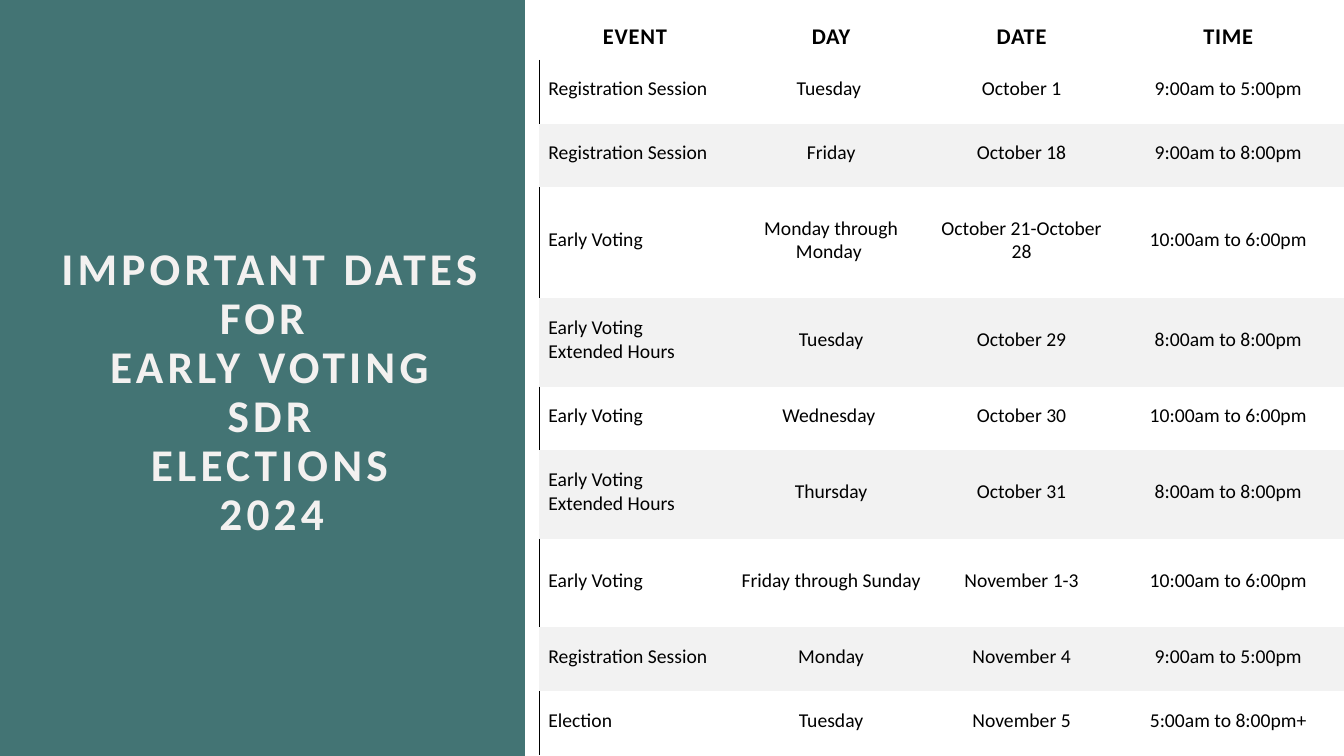
"""Build the slide of early voting dates."""
from lxml import etree
from pptx import Presentation
from pptx.dml.color import RGBColor
from pptx.enum.shapes import MSO_SHAPE
from pptx.enum.text import MSO_ANCHOR, MSO_AUTO_SIZE, PP_ALIGN
from pptx.oxml.ns import qn
from pptx.util import Pt

RECTANGLE = MSO_SHAPE.RECTANGLE
MIDDLE, BOTTOM = MSO_ANCHOR.MIDDLE, MSO_ANCHOR.BOTTOM
LEFT, CENTER = PP_ALIGN.LEFT, PP_ALIGN.CENTER
NO_AUTOFIT = MSO_AUTO_SIZE.NONE
TITLE_ONLY = 5
PLAIN_TABLE_STYLE = "{2D5ABB26-0587-4C30-8999-92F81FD0307C}"
FONT = "Calibri"
COLORS = {"panel": "437474", "title": "F3F1F0", "text": "000000", "band": "F2F2F2"}

TITLE_LINES = ["IMPORTANT DATES", "FOR ", "EARLY VOTING", "SDR", "ELECTIONS", "2024"]
COLUMN_WIDTHS = [136.8, 143.3, 128.9, 166.3]
HEADER, SINGLE, DOUBLE, TALL = 31.8, 45.5, 63.2, 79.2
SCHEDULE = [
    (HEADER, "EVENT", "DAY", "DATE", "TIME"),
    (SINGLE, "Registration Session", "Tuesday ", "October 1", "9:00am to 5:00pm"),
    (SINGLE, "Registration Session", "Friday", "October 18", "9:00am to 8:00pm"),
    (TALL, "Early Voting", "Monday through Monday ", "October 21-October 28", "10:00am to 6:00pm"),
    (DOUBLE, "Early Voting Extended Hours", "Tuesday", "October 29", "8:00am to 8:00pm"),
    (SINGLE, "Early Voting", "Wednesday ", "October 30", "10:00am to 6:00pm"),
    (DOUBLE, "Early Voting Extended Hours", "Thursday", "October 31", "8:00am to 8:00pm"),
    (DOUBLE, "Early Voting", "Friday through Sunday", "November 1-3", "10:00am to 6:00pm"),
    (SINGLE, "Registration Session", "Monday", "November 4", "9:00am to 5:00pm"),
    (SINGLE, "Election", "Tuesday", "November 5", "5:00am to 8:00pm+"),
]

TITLE_FORMAT = {"name": FONT, "size": Pt(32.4), "bold": True}
HEADER_FORMAT = {"name": FONT, "size": Pt(16), "bold": True}
BODY_FORMAT = {"name": FONT, "size": Pt(14), "bold": False}


def set_attributes(target, values):
    """Set each named value on the target."""
    for name, value in values.items():
        setattr(target, name, value)


def fill_solid(target, color):
    """Give a shape or cell a solid fill."""
    target.fill.solid()
    target.fill.fore_color.rgb = RGBColor.from_string(COLORS[color])


def format_text(text_frame, font_format, color, alignment, spacing=0):
    """Format every run, with letter spacing in points."""
    for paragraph in text_frame.paragraphs:
        paragraph.alignment = alignment
        for run in paragraph.runs:
            set_attributes(run.font, font_format)
            run.font.color.rgb = RGBColor.from_string(COLORS[color])
            run._r.get_or_add_rPr().set("spc", str(round(spacing * 100)))


def add_panel(slide):
    """Add the coloured panel behind the title."""
    panel = slide.shapes.add_shape(RECTANGLE, 0, 0, Pt(375), Pt(540))
    panel.shadow.inherit = False
    fill_solid(panel, "panel")
    panel.line.fill.background()
    slide.shapes._spTree.insert(2, panel._element)


def write_title(slide):
    """Place and format the title."""
    title = slide.shapes.title
    set_attributes(title, {"left": Pt(28.8), "top": Pt(149), "width": Pt(330.5), "height": Pt(263.5)})
    text_frame = title.text_frame
    text_frame.text = "\v".join(TITLE_LINES)
    set_attributes(text_frame, {"word_wrap": True, "auto_size": NO_AUTOFIT, "vertical_anchor": MIDDLE})
    format_text(text_frame, TITLE_FORMAT, "title", CENTER, 3)
    text_frame.paragraphs[0].line_spacing = 0.9


def add_left_border(cell):
    """Draw a thin line on the left side of a cell."""
    properties = cell._tc.get_or_add_tcPr()
    line = etree.SubElement(properties, qn("a:lnL"), w=str(Pt(1)))
    fill = etree.SubElement(line, qn("a:solidFill"))
    etree.SubElement(fill, qn("a:srgbClr"), val=COLORS["text"])


def write_cell(cell, text, row_index, column_index):
    """Write one cell in the style of its row and column."""
    is_header = row_index == 0
    cell.text = text
    set_attributes(cell, {
        "margin_left": Pt(6.5), "margin_right": Pt(6.5), "margin_bottom": Pt(6.5),
        "margin_top": Pt(6.5 if is_header else 3),
        "vertical_anchor": BOTTOM if is_header else MIDDLE,
    })
    if is_header:
        format_text(cell.text_frame, HEADER_FORMAT, "text", CENTER, 0.6)
    else:
        format_text(cell.text_frame, BODY_FORMAT, "text", CENTER if column_index else LEFT)
    if row_index % 2 and column_index == 0:
        add_left_border(cell)
    if row_index % 2 or is_header:
        cell.fill.background()
    else:
        fill_solid(cell, "band")


def add_schedule(slide):
    """Add the table of voting dates."""
    height = sum(row[0] for row in SCHEDULE)
    frame = slide.shapes.add_table(len(SCHEDULE), len(COLUMN_WIDTHS), Pt(385.2), Pt(10.2),
                                   Pt(sum(COLUMN_WIDTHS)), Pt(height))
    table = frame.table
    set_attributes(table, {"first_row": False, "horz_banding": False})
    next(table._tbl.iter(qn("a:tableStyleId"))).text = PLAIN_TABLE_STYLE
    for column, width in zip(table.columns, COLUMN_WIDTHS):
        column.width = Pt(width)
    for row_index, (row_height, *texts) in enumerate(SCHEDULE):
        table.rows[row_index].height = Pt(row_height)
        for column_index, text in enumerate(texts):
            write_cell(table.cell(row_index, column_index), text, row_index, column_index)


def main():
    """Build and save the presentation."""
    presentation = Presentation()
    set_attributes(presentation, {"slide_width": Pt(960), "slide_height": Pt(540)})
    slide = presentation.slides.add_slide(presentation.slide_layouts[TITLE_ONLY])
    add_panel(slide)
    write_title(slide)
    add_schedule(slide)
    presentation.save("out.pptx")


if __name__ == "__main__":
    main()
